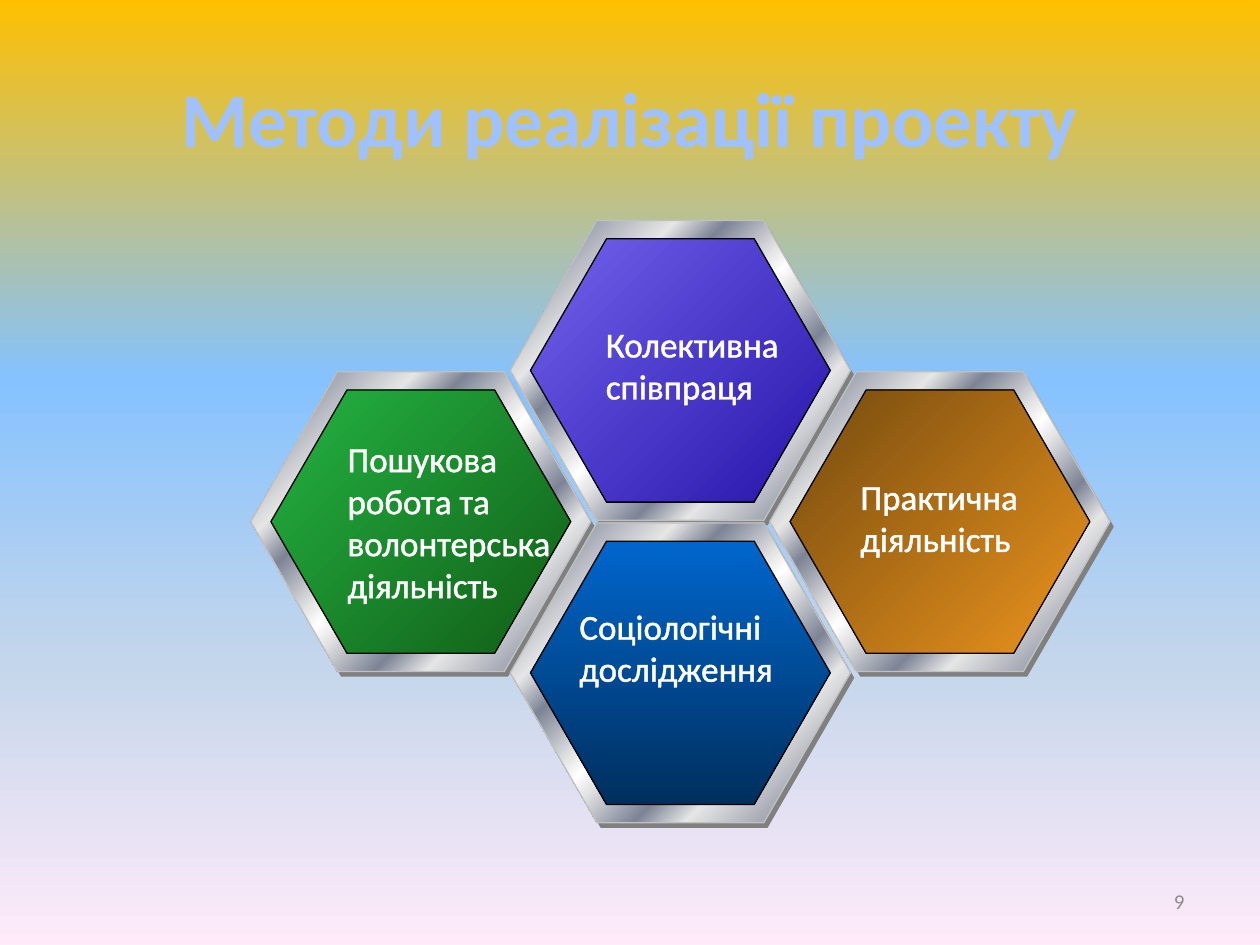
from dataclasses import dataclass
from typing import Any

from lxml.etree import SubElement
from pptx import Presentation
from pptx.dml.color import RGBColor
from pptx.enum.shapes import MSO_SHAPE
from pptx.enum.text import MSO_ANCHOR, PP_ALIGN
from pptx.oxml.ns import qn
from pptx.util import Inches, Pt

SLIDE_W, SLIDE_H = 10, 7.5
GRID_X, GRID_Y = 1.99, 1.75
COL, ROW = 2.06, 1.2
FRAME_W, FRAME_H = 2.7, 2.38
CORE_W, CORE_H = 2.38, 2.09

BACKGROUND = [(0, "FFC000"), (40, "85C2FF"), (70, "C4D6EB"), (100, "FFEBFA")]
TITLE_FILL = [(0, "BFD3F9"), (9, "A0C1FF"), (50, "003D85"), (79, "A0C1FF"), (100, "BFD3F9")]
STEEL = [(0, "E6E6E6"), (7, "7D8496"), (26, "E6E6E6"), (34, "7D8496"), (46, "E6E6E6"),
         (50, "FFFFFF"), (54, "E6E6E6"), (66, "7D8496"), (74, "E6E6E6"), (93, "7D8496"),
         (100, "E6E6E6")]


@dataclass
class Method:
    text: str
    col: int
    row: int
    start: str
    end: str
    angle: int
    label_dx: float
    label_dy: float
    label_w: float
    label_h: float = 0.78


METHODS = [
    Method("Колективна співпраця", 1, 0, "7262EC", "2614AA", 45, 0.66, 0.76, 1.63),
    Method("Пошукова робота та волонтерська діяльність", 0, 1, "24B443", "115D16", 45,
           0.67, 0.47, 1.84, 1.68),
    Method("Практична діяльність", 2, 1, "744A0E", "EC941E", 45, 0.62, 0.77, 1.61),
    Method("Соціологічні дослідження", 1, 2, "0066CC", "002F5E", 90, 0.45, 0.6, 1.77),
]


def rgb(color: str) -> RGBColor:
    return RGBColor.from_string(color)


def set_gradient(fill: Any, element: Any, stops: list, angle: int) -> None:
    fill.gradient()
    fill.gradient_angle = 360 - angle
    stop_list = next(element.iter(qn("a:gsLst")))
    for old in list(stop_list):
        stop_list.remove(old)
    for pos, color in stops:
        gs = SubElement(stop_list, qn("a:gs"), pos=str(pos * 1000))
        SubElement(gs, qn("a:srgbClr"), val=color)


def outline_text(r: Any, color: str, width: float) -> None:
    rPr = r.font._element
    ln = SubElement(rPr, qn("a:ln"), w=str(Pt(width)))
    fill = SubElement(ln, qn("a:solidFill"))
    SubElement(fill, qn("a:srgbClr"), val=color)
    rPr.insert(0, ln)


def add_text(s: Any, text: str, x: float, y: float, w: float, h: float, size: int,
             align: Any = PP_ALIGN.LEFT, anchor: Any = MSO_ANCHOR.TOP, bold: bool = False) -> Any:
    sp = s.shapes.add_textbox(Inches(x), Inches(y), Inches(w), Inches(h))
    tf = sp.text_frame
    tf.word_wrap, tf.vertical_anchor = True, anchor
    p = tf.paragraphs[0]
    p.alignment = align
    r = p.add_run()
    r.text = text
    for name, value in {"name": "Calibri", "size": Pt(size), "bold": bold}.items():
        setattr(r.font, name, value)
    return r


def set_solid(fill: Any, color: str) -> None:
    fill.solid()
    fill.fore_color.rgb = rgb(color)


def add_hexagon(s: Any, x: float, y: float, w: float, h: float) -> Any:
    sp = s.shapes.add_shape(MSO_SHAPE.HEXAGON, Inches(x), Inches(y), Inches(w), Inches(h))
    sp.adjustments[0], sp.adjustments[1] = 0.289, 1.155
    sp.shadow.inherit = False
    return sp


def add_gradient_hexagon(s: Any, x: float, y: float, w: float, h: float,
                         stops: list, angle: int, line: str) -> None:
    sp = add_hexagon(s, x, y, w, h)
    set_gradient(sp.fill, sp._element, stops, angle)
    sp.line.color.rgb = rgb(line)
    sp.line.width = Pt(0.75)


def add_method(s: Any, m: Method) -> None:
    x, y = GRID_X + m.col * COL, GRID_Y + m.row * ROW
    back = add_hexagon(s, x + 0.03, y + 0.04, FRAME_W, FRAME_H)
    set_solid(back.fill, "808080")
    back.line.fill.background()
    add_gradient_hexagon(s, x, y, FRAME_W, FRAME_H, STEEL, 45, "C0C0C0")
    add_gradient_hexagon(s, x + (FRAME_W - CORE_W) / 2, y + (FRAME_H - CORE_H) / 2,
                         CORE_W, CORE_H, [(0, m.start), (100, m.end)], m.angle, "000000")
    r = add_text(s, m.text, x + m.label_dx, y + m.label_dy, m.label_w, m.label_h, 20)
    set_solid(r.font.fill, "FFFFFF")
    outline_text(r, "FFFFFF", 1.45)


def main() -> None:
    prs = Presentation()
    prs.slide_width, prs.slide_height = Inches(SLIDE_W), Inches(SLIDE_H)
    s = prs.slides.add_slide(prs.slide_layouts[6])
    set_gradient(s.background.fill, s._element, BACKGROUND, 90)

    title = add_text(s, "Методи реалізації проекту", SLIDE_W * 0.05, SLIDE_H * 0.04,
                     SLIDE_W * 0.9, 1.25, 44, PP_ALIGN.CENTER, MSO_ANCHOR.MIDDLE, True)
    set_gradient(title.font.fill, title.font._element, TITLE_FILL, 90)
    outline_text(title, "467AB8", 0.83)

    for m in METHODS:
        add_method(s, m)

    number = add_text(s, "9", 7.17, 6.95, 2.33, 0.4, 12, PP_ALIGN.RIGHT, MSO_ANCHOR.MIDDLE)
    set_solid(number.font.fill, "8C8C8C")
    prs.save("out.pptx")


if __name__ == "__main__":
    main()
